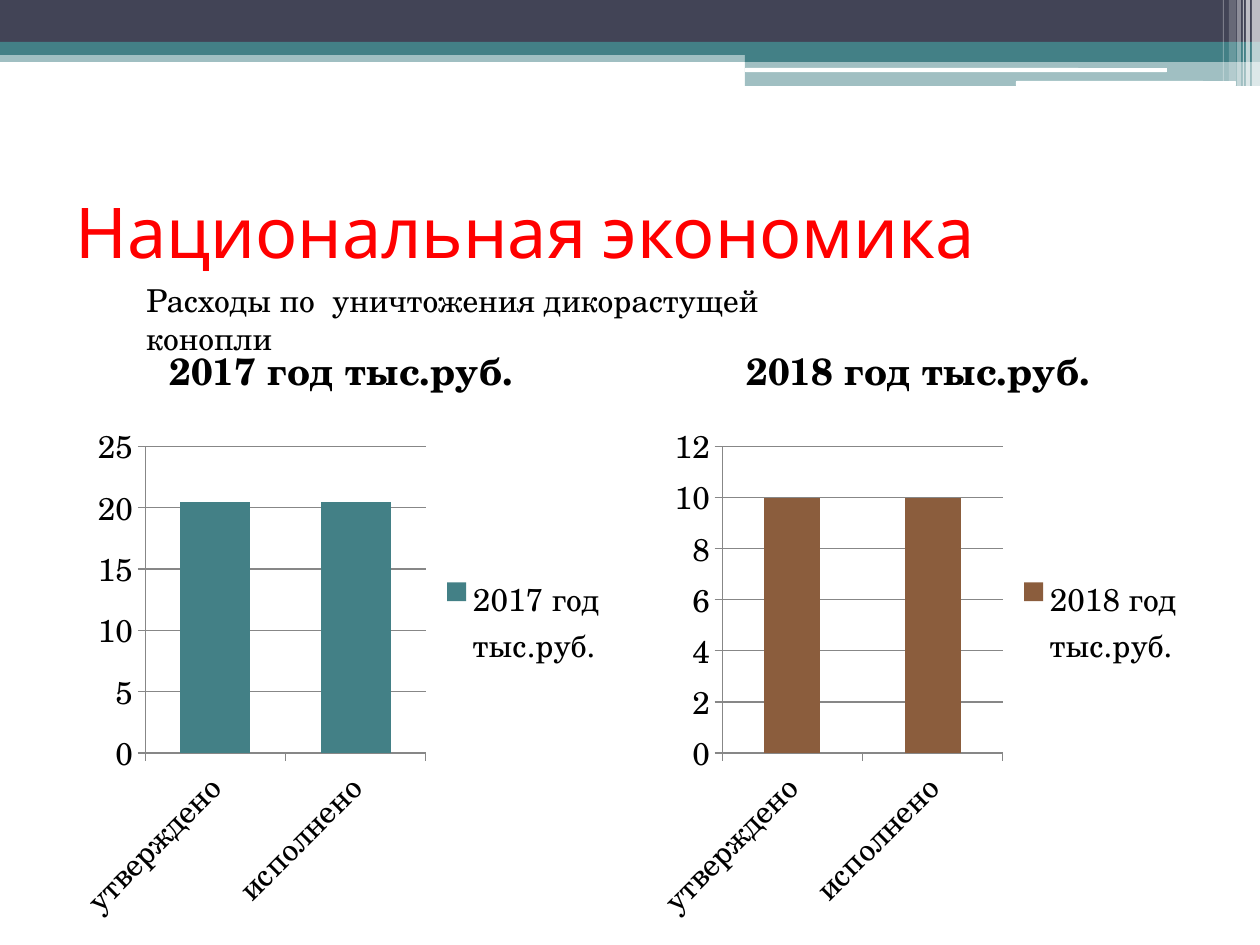
from lxml.etree import SubElement
from pptx import Presentation
from pptx.chart.data import CategoryChartData
from pptx.dml.color import RGBColor
from pptx.enum.chart import XL_CHART_TYPE as ChartType, XL_LEGEND_POSITION as LegendPosition
from pptx.enum.chart import XL_TICK_MARK as TickMark
from pptx.enum.shapes import MSO_SHAPE as Shape
from pptx.enum.text import MSO_ANCHOR as Anchor
from pptx.oxml.ns import qn
from pptx.util import Pt

PX = 914400 // 126
NAVY = RGBColor(0x42, 0x44, 0x56)
TEAL = RGBColor(0x43, 0x80, 0x86)
BROWN = RGBColor(0x8B, 0x5D, 0x3D)
GRAY = RGBColor(0x87, 0x87, 0x87)
WHITE = RGBColor(0xFF, 0xFF, 0xFF)
BLACK = RGBColor(0, 0, 0)
RED = RGBColor(0xFF, 0, 0)
BODY_FONT = "TeX Gyre Schola"

presentation = Presentation()
presentation.slide_width = 1260 * PX
presentation.slide_height = 945 * PX
slide = presentation.slides.add_slide(presentation.slide_layouts[6])


def add_text(box, text, font_name, size, color, anchor=Anchor.TOP):
    left, top, width, height = (n * PX for n in box)
    frame = slide.shapes.add_textbox(left, top, width, height).text_frame
    frame.word_wrap = True
    frame.vertical_anchor = anchor
    paragraph = frame.paragraphs[0]
    paragraph.text = text
    paragraph.font.name = font_name
    paragraph.font.size = Pt(size)
    paragraph.font.color.rgb = color


# Header bands and stripes: left, top, width, height, colour, opacity in percent
BANDS = [
    (0, 50, 1260, 12, TEAL, 50),
    (0, 0, 1260, 42, NAVY, 100),
    (0, 42, 1260, 13, TEAL, 100),
    (745, 49, 515, 13, TEAL, 100),
    (745, 61, 515, 25, TEAL, 50),
    (745, 68, 422, 4, WHITE, 100),
    (1016, 81, 220, 5, WHITE, 100),
    (1252, 0, 8, 86, WHITE, 65),
    (1246, 0, 4, 86, WHITE, 65),
    (1243, 0, 1, 86, WHITE, 60),
    (1237, 0, 4, 86, WHITE, 40),
    (1229, 0, 7, 81, WHITE, 20),
    (1223, 0, 1, 81, WHITE, 30),
]
for left, top, width, height, color, opacity in BANDS:
    preset = Shape.ROUNDED_RECTANGLE if color == WHITE and width > height else Shape.RECTANGLE
    band = slide.shapes.add_shape(preset, left * PX, top * PX, width * PX, height * PX)
    band.shadow.inherit = False
    band.line.fill.background()
    band.fill.solid()
    band.fill.fore_color.rgb = color
    if opacity < 100:
        color_element = band.fill._xPr.find(qn("a:solidFill"))[0]
        SubElement(color_element, qn("a:alpha"), val=str(opacity * 1000))

add_text((63, 157, 1134, 147), "Национальная экономика", "Karla", 40, RED, Anchor.MIDDLE)

# Charts: left, year, value, type, gap, overlap, colour
CHARTS = [
    (63, 2017, 20.5, ChartType.COLUMN_STACKED, 100, 100, TEAL),
    (640, 2018, 10, ChartType.COLUMN_CLUSTERED, 150, 0, BROWN),
]
for left, year, value, chart_type, gap, overlap, color in CHARTS:
    name = f"{year} год тыс.руб."
    data = CategoryChartData()
    data.categories = ["утверждено", "исполнено"]
    data.add_series(name, [value, value])
    chart = slide.shapes.add_chart(chart_type, left * PX, 310 * PX, 557 * PX, 624 * PX, data).chart
    chart.font.name = BODY_FONT
    chart.font.size = Pt(18)
    chart.font.color.rgb = BLACK

    chart.has_title = True
    title = chart.chart_title.text_frame.paragraphs[0]
    title.text = name
    title.font.name = BODY_FONT
    title.font.size = Pt(21.6)
    title.font.bold = True
    title.font.color.rgb = BLACK

    chart.has_legend = True
    chart.legend.position = LegendPosition.RIGHT
    chart.legend.include_in_layout = False

    for axis in (chart.category_axis, chart.value_axis):
        axis.major_tick_mark = TickMark.OUTSIDE
        axis.format.line.color.rgb = GRAY
    chart.value_axis.major_gridlines.format.line.color.rgb = GRAY
    chart.category_axis.tick_labels.font.size = Pt(18)
    chart.category_axis._element.find(qn("c:txPr")).find(qn("a:bodyPr")).set("rot", "-2700000")

    plot = chart.plots[0]
    plot.vary_by_categories = False
    plot.gap_width = gap
    plot.overlap = overlap
    fill = plot.series[0].format.fill
    fill.solid()
    fill.fore_color.rgb = color

add_text((134, 275, 716, 50), "Расходы по  уничтожения дикорастущей конопли", BODY_FONT, 18, BLACK)

presentation.save("out.pptx")
